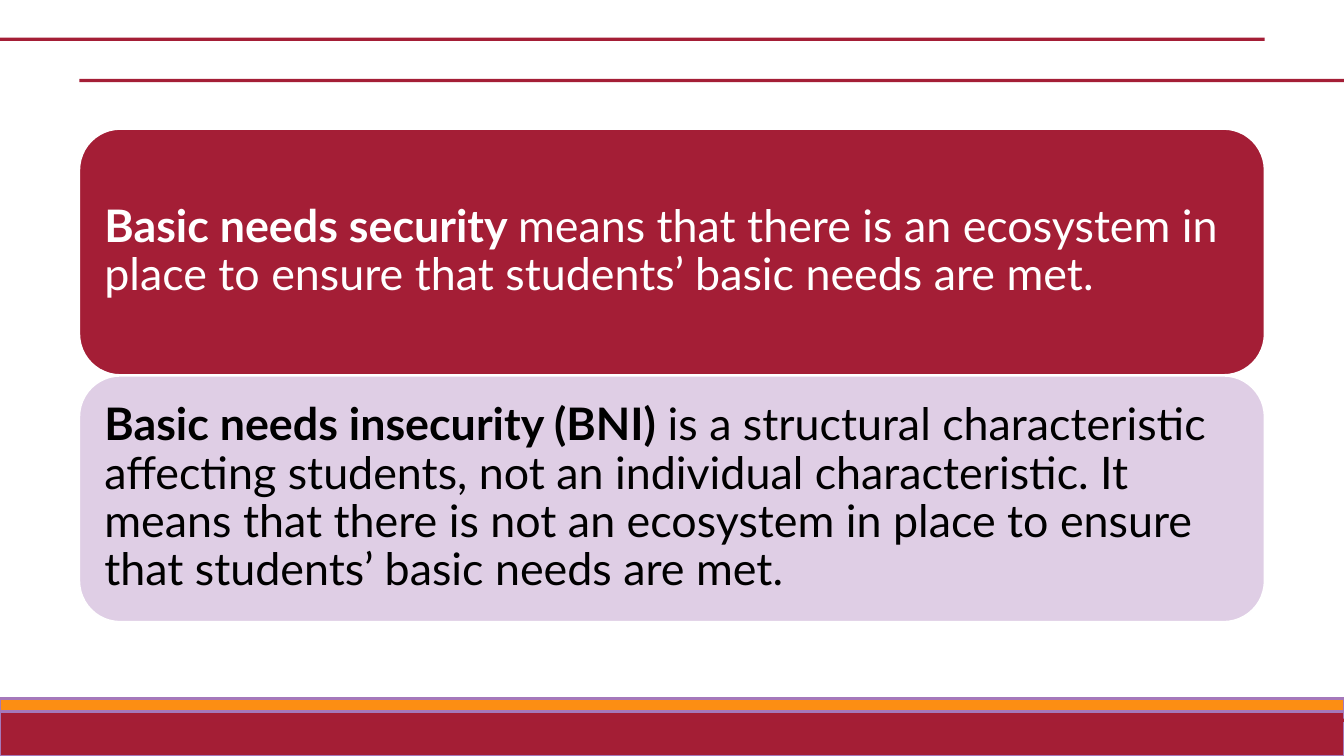
from dataclasses import dataclass

from pptx import Presentation
from pptx.dml.color import RGBColor
from pptx.enum.shapes import MSO_SHAPE as SHAPE
from pptx.enum.text import MSO_ANCHOR as ANCHOR, PP_ALIGN as ALIGN
from pptx.util import Cm, Pt


@dataclass(frozen=True)
class Theme:
    crimson: str = "A41E35"
    card_crimson: str = "A41E36"
    orange: str = "FC8E13"
    lilac: str = "DFCEE5"
    violet: str = "A578BA"
    white: str = "FFFFFF"
    black: str = "000000"
    font: str = "Lato"
    size: float = 32
    band_line: float = 2
    card_line: float = 1.25


THEME = Theme()
WIDTH, HEIGHT = 33.87, 19.05
MARGIN = 2
CARD_GAP = 0.02

DEFINITIONS = [
    ("Basic needs security ",
     "means that there is an ecosystem in place to ensure that "
     "students’ basic needs are met.",
     THEME.card_crimson, THEME.white),
    ("Basic needs insecurity (BNI) ",
     "is a structural characteristic affecting students, not an individual "
     "characteristic. It means that there is not an ecosystem in place to "
     "ensure that students’ basic needs are met.",
     THEME.lilac, THEME.black),
]


def add_box(slide, kind, box, fill, line=None, line_width=0):
    """Add a filled shape; box is left, top, width, height in cm."""
    sp = slide.shapes.add_shape(kind, *(Cm(v) for v in box))
    sp.shadow.inherit = False
    sp.fill.solid()
    sp.fill.fore_color.rgb = RGBColor.from_string(fill)
    if line:
        sp.line.color.rgb = RGBColor.from_string(line)
        sp.line.width = Pt(line_width)
    else:
        sp.line.fill.background()
    return sp


def add_footer(slide, box):
    left, top, width, height = box
    stripe = 0.34
    # Crimson base below the orange stripe
    add_box(slide, SHAPE.RECTANGLE,
            (left, top + stripe, width, height - stripe),
            THEME.crimson, THEME.violet, THEME.band_line)
    add_box(slide, SHAPE.RECTANGLE, (left, top, width, stripe),
            THEME.orange, THEME.violet, THEME.band_line)


def add_rules(slide, box):
    left, top, width, height = box
    thickness = 0.08
    # Upper rule stops at the right margin, the others start at the left one
    for indent, offset in ((0, 0), (MARGIN, 1.04), (MARGIN, height - thickness)):
        add_box(slide, SHAPE.RECTANGLE,
                (left + indent, top + offset, width - MARGIN, thickness),
                THEME.card_crimson)


def add_card(slide, box, term, meaning, fill, color):
    sp = add_box(slide, SHAPE.ROUNDED_RECTANGLE, box, fill,
                 THEME.white, THEME.card_line)
    tf = sp.text_frame
    tf.word_wrap = True
    tf.vertical_anchor = ANCHOR.MIDDLE
    tf.margin_left = tf.margin_right = Cm(0.33)
    tf.margin_top = tf.margin_bottom = Cm(0.33)
    p = tf.paragraphs[0]
    p.alignment = ALIGN.LEFT
    p.line_spacing = 0.9
    for text, bold in ((term, True), (meaning, False)):
        r = p.add_run()
        r.text = text
        r.font.name = THEME.font
        r.font.size = Pt(THEME.size)
        r.font.bold = bold
        r.font.color.rgb = RGBColor.from_string(color)


def add_definitions(slide, box):
    left, top, width, height = box
    count = len(DEFINITIONS)
    card_height = (height - CARD_GAP * (count - 1)) / count
    for i, definition in enumerate(DEFINITIONS):
        card_top = top + i * (card_height + CARD_GAP)
        add_card(slide, (left, card_top, width, card_height), *definition)


def main():
    prs = Presentation()
    prs.slide_width, prs.slide_height = Cm(WIDTH), Cm(HEIGHT)
    slide = prs.slides.add_slide(prs.slide_layouts[6])
    add_footer(slide, (0, 17.6, WIDTH, HEIGHT - 17.6))
    add_definitions(slide, (MARGIN, 3.25, WIDTH - 2 * MARGIN, 12.42))
    add_rules(slide, (0, 0.95, WIDTH, 17.24))
    prs.save("out.pptx")


if __name__ == "__main__":
    main()
